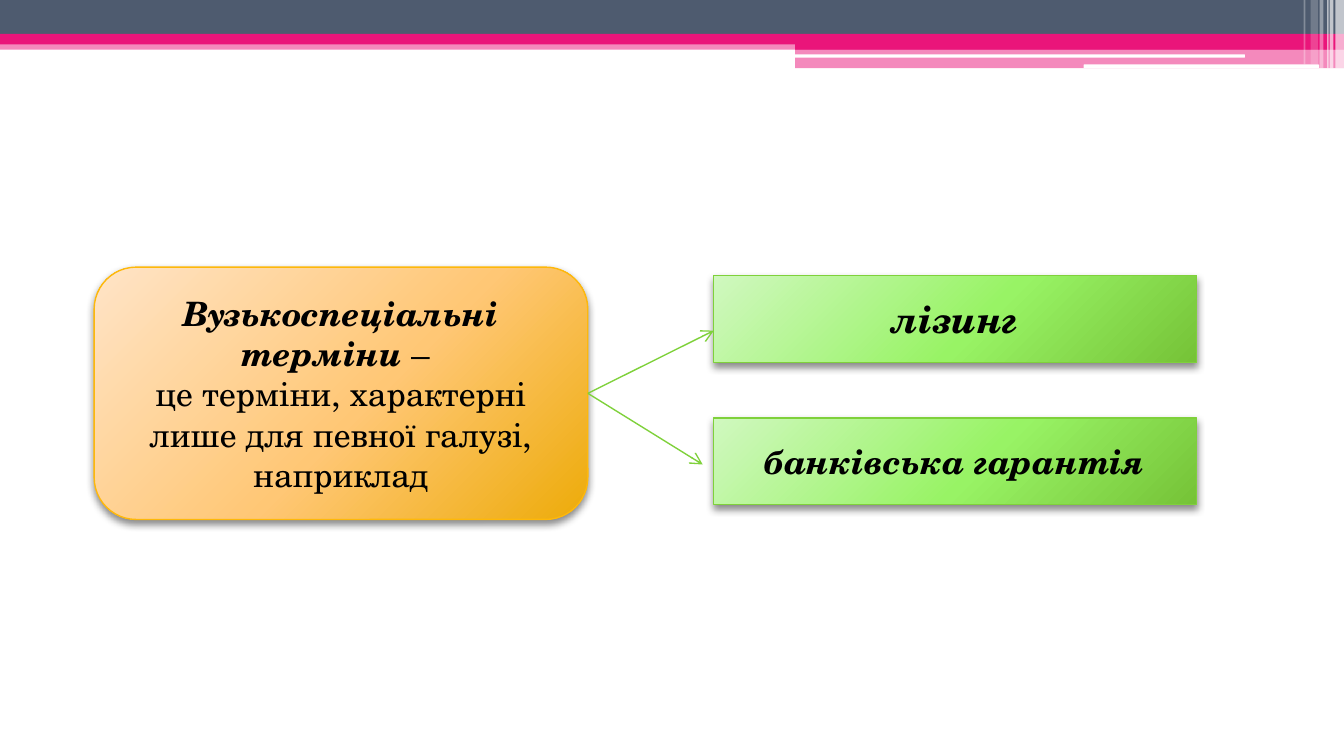
from lxml import etree
from pptx import Presentation
from pptx.dml.color import RGBColor
from pptx.enum.shapes import MSO_CONNECTOR, MSO_SHAPE
from pptx.enum.text import MSO_ANCHOR, PP_ALIGN
from pptx.oxml import parse_xml
from pptx.oxml.ns import nsdecls, qn
from pptx.util import Cm, Pt

RECTANGLE = MSO_SHAPE.RECTANGLE
ROUNDED = MSO_SHAPE.ROUNDED_RECTANGLE
STRAIGHT = MSO_CONNECTOR.STRAIGHT
MIDDLE = MSO_ANCHOR.MIDDLE
CENTER = PP_ALIGN.CENTER

BLACK = RGBColor(0x00, 0x00, 0x00)
WHITE = RGBColor(0xFF, 0xFF, 0xFF)
SLATE = RGBColor(0x4E, 0x5B, 0x6F)
PINK = RGBColor(0xEA, 0x15, 0x7A)
AMBER = RGBColor(0xFE, 0xB8, 0x0A)
GREEN = RGBColor(0x7F, 0xD1, 0x3B)
AMBER_BLEND = (
    RGBColor(0xFF, 0xE4, 0xC7),
    RGBColor(0xFF, 0xC7, 0x75),
    RGBColor(0xED, 0xAB, 0x09),
)
GREEN_BLEND = (
    RGBColor(0xD0, 0xF8, 0xBF),
    RGBColor(0x98, 0xF3, 0x65),
    RGBColor(0x76, 0xC3, 0x37),
)
BLEND_STOPS = (0, 55, 100)

FONT = "TeX Gyre Schola"
SLIDE_WIDTH, SLIDE_HEIGHT = 25.4, 14.29
SPLIT = 15.03
RIGHT_WIDTH = SLIDE_WIDTH - SPLIT

BANDS = [
    (0, 0.77, SLIDE_WIDTH, 0.17, PINK, 50),
    (0, 0, SLIDE_WIDTH, 0.64, SLATE, 100),
    (0, 0.64, SLIDE_WIDTH, 0.2, PINK, 100),
    (SPLIT, 0.76, RIGHT_WIDTH, 0.18, PINK, 100),
    (SPLIT, 0.93, RIGHT_WIDTH, 0.36, PINK, 50),
]
GROOVES = [(15.02, 1.03, 8.51, 0.06), (20.48, 1.22, 4.45, 0.07)]
STRIPES = [
    (25.24, 0.16, 1.3, 65),
    (25.13, 0.07, 1.3, 65),
    (25.08, 0.03, 1.3, 60),
    (24.94, 0.07, 1.3, 40),
    (24.77, 0.14, 1.22, 20),
    (24.64, 0.03, 1.22, 30),
]

TERM_LEFT, TERM_TOP, TERM_WIDTH, TERM_HEIGHT = 1.78, 5.05, 9.33, 4.77
EXAMPLE_LEFT, EXAMPLE_WIDTH, EXAMPLE_HEIGHT = 13.49, 9.12, 1.64
TERM = [
    [("Вузькоспеціальні терміни ", True), ("– ", False)],
    [("це терміни, характерні лише для певної галузі, наприклад", False)],
]
EXAMPLES = [("лізинг", 5.21, 20), ("банківська гарантія", 7.9, 18)]
ARROW_ENDS = [(EXAMPLE_LEFT, 6.25), (13.28, 8.78)]


class Painter:
    def __init__(self, page, font):
        self.page = page
        self.font = font

    def band(self, left, top, width, height, color, opacity=100, kind=RECTANGLE):
        shape = self.page.shapes.add_shape(kind, Cm(left), Cm(top), Cm(width), Cm(height))
        shape.shadow.inherit = False
        shape.fill.solid()
        shape.fill.fore_color.rgb = color
        shape.line.fill.background()
        if opacity < 100:
            tint = shape.fill._xPr.find(qn("a:solidFill"))[0]
            etree.SubElement(tint, qn("a:alpha"), val=str(opacity * 1000))
        return shape

    def card(self, left, top, width, height, blend, edge, paragraphs, size, kind=RECTANGLE):
        box = self.band(left, top, width, height, blend[0], kind=kind)
        box.line.color.rgb = edge
        box.line.width = Pt(0.75)
        self.blend(box, blend)
        self.drop_shadow(box)
        frame = box.text_frame
        frame.word_wrap = True
        frame.vertical_anchor = MIDDLE
        for index, spans in enumerate(paragraphs):
            para = frame.add_paragraph() if index else frame.paragraphs[0]
            para.alignment = CENTER
            for text, strong in spans:
                span = para.add_run()
                span.text = text
                span.font.name = self.font
                span.font.size = Pt(size)
                span.font.bold = span.font.italic = strong
                span.font.color.rgb = BLACK

    def blend(self, box, colors):
        stops = "".join(
            f'<a:gs pos="{stop * 1000}"><a:srgbClr val="{color}"/></a:gs>'
            for stop, color in zip(BLEND_STOPS, colors)
        )
        gradient = parse_xml(
            f'<a:gradFill {nsdecls("a")} rotWithShape="1"><a:gsLst>{stops}</a:gsLst>'
            '<a:path path="circle"><a:fillToRect l="-40000" t="-90000" '
            'r="140000" b="190000"/></a:path></a:gradFill>'
        )
        properties = box._element.spPr
        properties.replace(properties.find(qn("a:solidFill")), gradient)

    def drop_shadow(self, box):
        effects = box._element.spPr.find(qn("a:effectLst"))
        effects.append(parse_xml(
            f'<a:outerShdw {nsdecls("a")} blurRad="{Pt(4)}" dist="{Pt(2)}" '
            'dir="5400000" rotWithShape="0"><a:srgbClr val="000000">'
            '<a:alpha val="45000"/></a:srgbClr></a:outerShdw>'
        ))

    def arrow(self, start, end, color):
        points = [Cm(value) for value in (*start, *end)]
        line = self.page.shapes.add_connector(STRAIGHT, *points)
        line.line.color.rgb = color
        line.line.width = Pt(0.75)
        etree.SubElement(line.line._get_or_add_ln(), qn("a:tailEnd"), type="arrow")
        etree.SubElement(line._element.spPr, qn("a:effectLst"))


def main():
    deck = Presentation()
    deck.slide_width, deck.slide_height = Cm(SLIDE_WIDTH), Cm(SLIDE_HEIGHT)
    painter = Painter(deck.slides.add_slide(deck.slide_layouts[6]), FONT)

    for band in BANDS:
        painter.band(*band)
    for groove in GROOVES:
        painter.band(*groove, WHITE, kind=ROUNDED)
    for left, width, height, opacity in STRIPES:
        painter.band(left, 0, width, height, WHITE, opacity)

    painter.card(TERM_LEFT, TERM_TOP, TERM_WIDTH, TERM_HEIGHT,
                 AMBER_BLEND, AMBER, TERM, 18, ROUNDED)
    for text, top, size in EXAMPLES:
        painter.card(EXAMPLE_LEFT, top, EXAMPLE_WIDTH, EXAMPLE_HEIGHT,
                     GREEN_BLEND, GREEN, [[(text, True)]], size)

    start = (TERM_LEFT + TERM_WIDTH, TERM_TOP + TERM_HEIGHT / 2)
    for end in ARROW_ENDS:
        painter.arrow(start, end, GREEN)

    deck.save("out.pptx")


if __name__ == "__main__":
    main()
